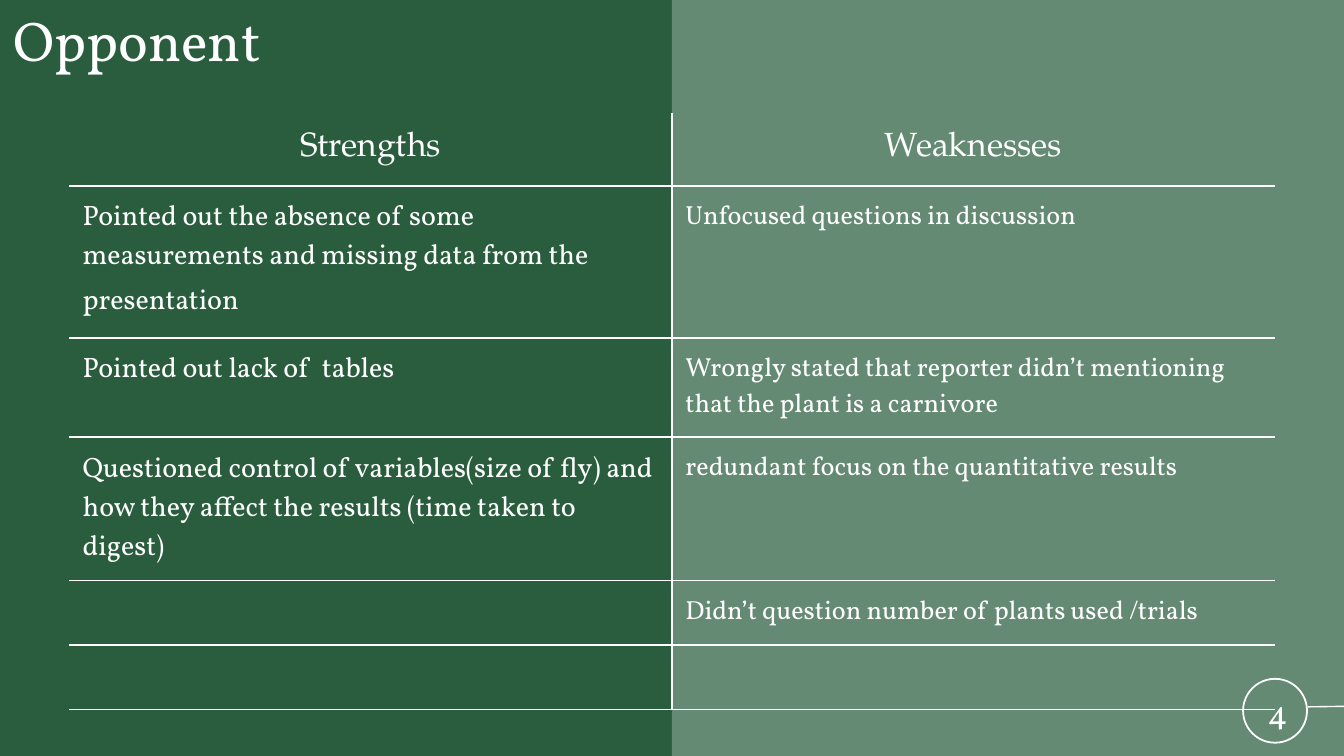
from lxml import etree
from pptx import Presentation
from pptx.dml.color import RGBColor
from pptx.enum.shapes import MSO_CONNECTOR, MSO_SHAPE
from pptx.enum.text import MSO_ANCHOR, PP_ALIGN
from pptx.oxml.ns import qn
from pptx.util import Pt

CENTER, LEFT = PP_ALIGN.CENTER, PP_ALIGN.LEFT
TOP, MIDDLE = MSO_ANCHOR.TOP, MSO_ANCHOR.MIDDLE
COLORS = {"green": "295D3E", "white": "FFFFFF"}
WHITE = RGBColor.from_string(COLORS["white"])
BODY_FONT, HEAD_FONT = "Vollkorn", "TeX Gyre Pagella"
INSET = Pt(7.2)


def write(frame, runs, font=BODY_FONT, align=LEFT):
    """Fill the first paragraph with (text, size) runs in white."""
    frame.margin_left = frame.margin_right = INSET
    frame.margin_top = frame.margin_bottom = INSET
    frame.word_wrap = True
    paragraph = frame.paragraphs[0]
    paragraph.alignment = align
    for text, size in runs:
        run = paragraph.add_run()
        run.text = text
        run.font.name, run.font.size = font, Pt(size)
        run.font.color.rgb = WHITE
    return paragraph


def set_borders(cell, widths):
    """Draw white cell borders; a width of 0 means no border."""
    properties = cell._tc.get_or_add_tcPr()
    for place, (side, width) in enumerate(widths.items()):
        border = etree.Element(qn(f"a:ln{side}"), w=str(Pt(width)))
        if width:
            fill = etree.SubElement(border, qn("a:solidFill"))
            etree.SubElement(fill, qn("a:srgbClr"), val=COLORS["white"])
        else:
            etree.SubElement(border, qn("a:noFill"))
        properties.insert(place, border)


prs = Presentation()
prs.slide_width, prs.slide_height = Pt(720), Pt(405)
slide = prs.slides.add_slide(prs.slide_layouts[6])
slide.background.fill.solid()
slide.background.fill.fore_color.rgb = RGBColor.from_string(COLORS["green"])
shapes = slide.shapes

title = shapes.add_textbox(Pt(0), Pt(-4.3), Pt(671), Pt(45.4))
write(title.text_frame, [("Opponent", 30)])

# Pale right half
right_half = shapes.add_shape(MSO_SHAPE.RECTANGLE, Pt(360), Pt(0), Pt(378.7), Pt(405))
right_half.shadow.inherit = False
right_half.line.fill.background()
right_half.fill.solid()
right_half.fill.fore_color.rgb = WHITE
tint = right_half.fill._xPr.find(f".//{qn('a:srgbClr')}")
etree.SubElement(tint, qn("a:alpha"), val="28000")

# Strengths and weaknesses
rows = [
    ([("Strengths", 18)], [("Weaknesses", 18)]),
    ([("Pointed out the absence of some measurements and missing data "
       "from the presentation", 15), (" ", 18)],
     [("Unfocused questions in discussion", 14)]),
    ([("Pointed out lack of  tables", 15)],
     [("Wrongly stated that reporter didn’t mentioning that the plant is a carnivore", 14)]),
    ([("Questioned control of variables(size of fly) and how they affect "
       "the results (time taken to digest)", 15)],
     [("redundant focus on the quantitative results", 14)]),
    ([], [("Didn’t question number of plants used /trials", 14)]),
    ([], []),
]
row_heights = [39, 81.4, 53.2, 77, 34.4, 34.8]
rules = [0, 1.5, 1.5, 0.75, 0.75, 0.75, 0.75]
column_width = 322.9

table = shapes.add_table(len(rows), 2, Pt(37.1), Pt(60.6),
                         Pt(2 * column_width), Pt(sum(row_heights))).table
table.first_row = table.horz_banding = False
for column in table.columns:
    column.width = Pt(column_width)
for r, (entries, height) in enumerate(zip(rows, row_heights)):
    table.rows[r].height = Pt(height)
    header = r == 0
    for c, runs in enumerate(entries):
        cell = table.cell(r, c)
        cell.margin_left = cell.margin_right = INSET
        cell.margin_top = cell.margin_bottom = INSET
        cell.vertical_anchor = MIDDLE if header else TOP
        paragraph = write(cell.text_frame, runs, HEAD_FONT if header else BODY_FONT,
                          CENTER if header else LEFT)
        if not runs:
            paragraph.font.size = Pt(14)
        cell.fill.background()
        set_borders(cell, {"L": 1.5 * c, "R": 1.5 * (1 - c),
                           "T": rules[r], "B": rules[r + 1]})

# Page number in a ring, with a line to the slide's edge
ring = shapes.add_shape(MSO_SHAPE.DONUT, Pt(665.5), Pt(363.2), Pt(35.2), Pt(35.2))
ring.adjustments[0] = 0.027
ring.shadow.inherit = False
ring.fill.solid()
ring.fill.fore_color.rgb = WHITE
ring.line.fill.background()

page_number = shapes.add_textbox(Pt(672), Pt(360), Pt(23), Pt(35.2))
number_line = write(page_number.text_frame, [("4", 18)], align=CENTER)
number_line.line_spacing = 1.15
number_line.space_after = Pt(16)

edge_line = shapes.add_connector(MSO_CONNECTOR.STRAIGHT, Pt(700.7), Pt(378.7),
                                 Pt(746.6), Pt(378))
edge_line.line.color.rgb = WHITE
edge_line.line.width = Pt(0.75)
etree.SubElement(edge_line._element.spPr, qn("a:effectLst"))

prs.save("out.pptx")
